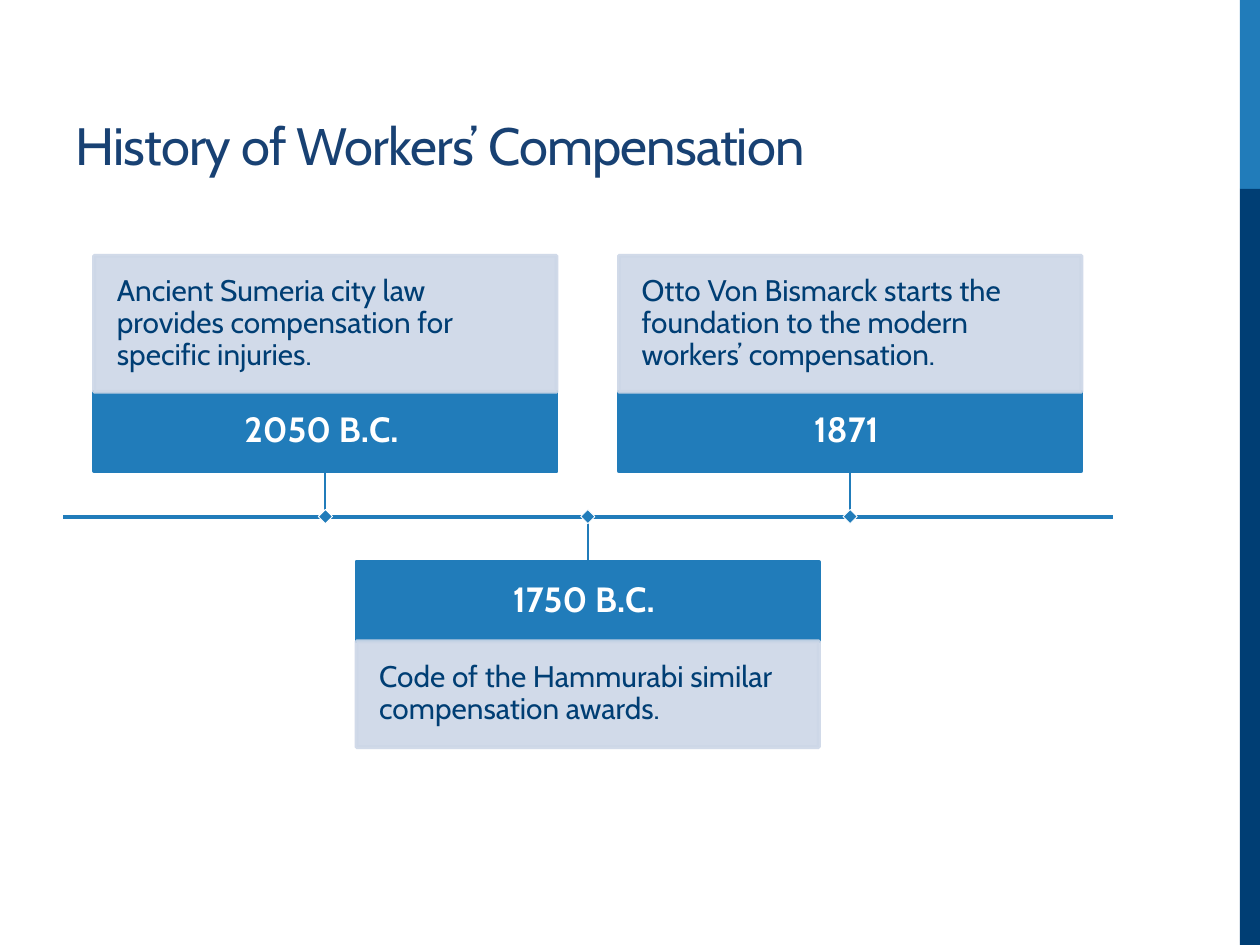
from dataclasses import dataclass

from lxml.etree import SubElement
from pptx import Presentation
from pptx.dml.color import RGBColor
from pptx.enum.shapes import MSO_CONNECTOR, MSO_SHAPE
from pptx.enum.text import MSO_ANCHOR, MSO_AUTO_SIZE, PP_ALIGN
from pptx.oxml.ns import qn
from pptx.util import Inches, Pt


@dataclass(frozen=True)
class Theme:
    font: str = "Cabin"
    blue: RGBColor = RGBColor(0x21, 0x7C, 0xBA)
    navy: RGBColor = RGBColor(0x00, 0x3E, 0x74)
    title: RGBColor = RGBColor(0x18, 0x41, 0x73)
    pale: RGBColor = RGBColor(0xCD, 0xD7, 0xE7)
    white: RGBColor = RGBColor(0xFF, 0xFF, 0xFF)
    title_size: Pt = Pt(30)
    date_size: Pt = Pt(20)
    body_size: Pt = Pt(17)
    heavy_line: Pt = Pt(2.25)
    stem_line: Pt = Pt(1)
    marker_line: Pt = Pt(0.5)


@dataclass(frozen=True)
class Box:
    left: float
    top: float
    width: float
    height: float

    def lengths(self):
        return [Inches(v) for v in (self.left, self.top, self.width, self.height)]


THEME = Theme()
DATE_HEIGHT = 0.63
CARD_WIDTH = 3.67
STEM_LENGTH = 0.36
MARKER_SIZE = 0.08
MILESTONES = [
    ("2050 B.C. ", "Ancient Sumeria city law provides compensation for specific injuries.", 1.08, True),
    ("1750 B.C. ", "Code of the Hammurabi similar compensation awards.", 0.84, False),
    ("1871 ", "Otto Von Bismarck starts the foundation to the modern workers’ compensation.", 1.08, True),
]


def add_rectangle(page, box, fill, line=None, line_width=None):
    shape = page.shapes.add_shape(MSO_SHAPE.RECTANGLE, *box.lengths())
    shape.shadow.inherit = False
    shape.fill.solid()
    shape.fill.fore_color.rgb = fill
    if line is None:
        shape.line.fill.background()
    else:
        shape.line.color.rgb = line
        shape.line.width = line_width
    return shape


def add_line(page, start, end, width):
    line = page.shapes.add_connector(
        MSO_CONNECTOR.STRAIGHT, *[Inches(v) for v in (*start, *end)])
    line.line.color.rgb = THEME.blue
    line.line.width = width
    SubElement(line._element.spPr, qn("a:effectLst"))
    return line


def add_span(para, text, size, color, bold=False):
    span = para.add_run()
    span.text = text
    span.font.name = THEME.font
    span.font.size = size
    span.font.color.rgb = color
    span.font.bold = bold
    return span


def write_label(shape, text, size, color, inset, align, bold=False):
    frame = shape.text_frame
    frame.word_wrap = True
    frame.vertical_anchor = MSO_ANCHOR.MIDDLE
    frame.margin_left = frame.margin_right = Inches(inset)
    frame.margin_top = frame.margin_bottom = Inches(inset)
    para = frame.paragraphs[0]
    para.alignment = align
    para.line_spacing = 0.9
    add_span(para, text, size, color, bold)


def make_translucent(shape, percent):
    for color in shape._element.spPr.iter(qn("a:srgbClr")):
        SubElement(color, qn("a:alpha")).set("val", str(percent * 1000))


def add_side_bar(page, box):
    accent = box.height / 5
    add_rectangle(page, Box(box.left, box.top, box.width, accent), THEME.blue)
    add_rectangle(page, Box(box.left, box.top + accent, box.width, box.height - accent), THEME.navy)


def add_title(page, box, text):
    title = page.shapes.title
    title.left, title.top, title.width, title.height = box.lengths()
    frame = title.text_frame
    frame.word_wrap = True
    frame.auto_size = MSO_AUTO_SIZE.NONE
    frame.vertical_anchor = MSO_ANCHOR.BOTTOM
    para = frame.paragraphs[0]
    para.alignment = PP_ALIGN.LEFT
    span = add_span(para, text, THEME.title_size, THEME.title)
    span.font._element.set("spc", "-50")


def add_card(page, box, date, text, above):
    body_height = box.height - DATE_HEIGHT
    date_top = box.top + body_height if above else box.top
    body_top = box.top if above else box.top + DATE_HEIGHT
    date_box = add_rectangle(page, Box(box.left, date_top, box.width, DATE_HEIGHT),
                             THEME.blue, THEME.blue, THEME.heavy_line)
    write_label(date_box, date, THEME.date_size, THEME.white, 0.11, PP_ALIGN.CENTER, True)
    body = add_rectangle(page, Box(box.left, body_top, box.width, body_height),
                         THEME.pale, THEME.pale, THEME.heavy_line)
    make_translucent(body, 90)
    write_label(body, text, THEME.body_size, THEME.navy, 0.18, PP_ALIGN.LEFT)
    return date_box


def add_timeline(page, box, milestones):
    axis = box.top + box.height / 2
    add_line(page, (box.left, axis), (box.left + box.width, axis), THEME.heavy_line)
    step = box.width / (len(milestones) + 1)
    for index, (date, text, body_height, above) in enumerate(milestones, 1):
        center = box.left + index * step
        height = DATE_HEIGHT + body_height
        edge = axis - STEM_LENGTH if above else axis + STEM_LENGTH
        card_top = edge - height if above else edge
        date_box = add_card(page, Box(center - CARD_WIDTH / 2, card_top, CARD_WIDTH, height),
                            date, text, above)
        stem = add_line(page, (center, edge), (center, axis), THEME.stem_line)
        stem.begin_connect(date_box, 2 if above else 0)
        marker = add_rectangle(
            page, Box(center - MARKER_SIZE / 2, axis - MARKER_SIZE / 2, MARKER_SIZE, MARKER_SIZE),
            THEME.blue, THEME.white, THEME.marker_line)
        marker.rotation = 45


def main():
    deck = Presentation()
    deck.slide_width = Inches(10)
    deck.slide_height = Inches(7.5)
    page = deck.slides.add_slide(deck.slide_layouts[5])
    add_side_bar(page, Box(9.84, 0, 0.16, 7.5))
    add_title(page, Box(0.5, 0.45, 8.33, 1), "History of Workers’ Compensation")
    add_timeline(page, Box(0.5, 2.03, 8.33, 4.14), MILESTONES)
    deck.save("out.pptx")


if __name__ == "__main__":
    main()
